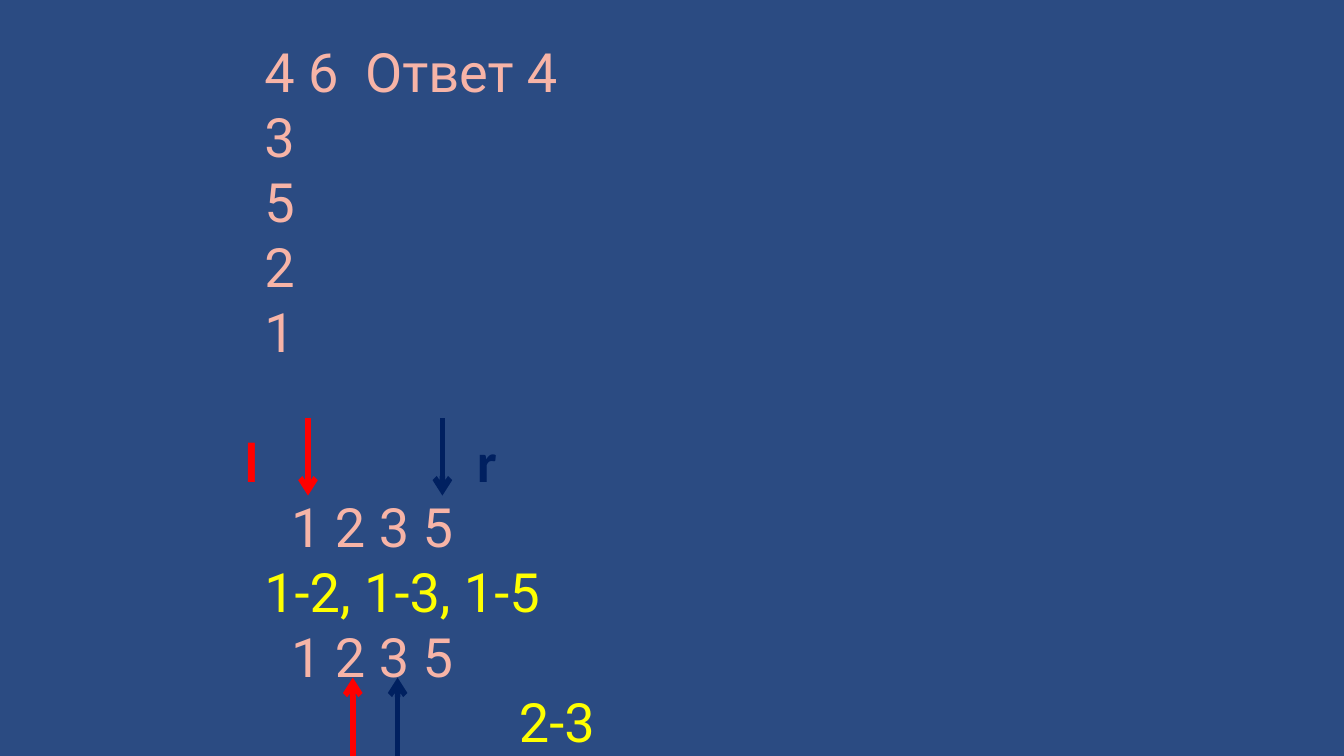
from lxml import etree
from pptx import Presentation
from pptx.dml.color import RGBColor
from pptx.enum.shapes import MSO_CONNECTOR
from pptx.enum.text import MSO_ANCHOR, MSO_AUTO_SIZE, PP_ALIGN
from pptx.oxml.ns import qn
from pptx.util import Pt

LINE = MSO_CONNECTOR.STRAIGHT
TOP = MSO_ANCHOR.TOP
GROW = MSO_AUTO_SIZE.SHAPE_TO_FIT_TEXT
LEFT = PP_ALIGN.LEFT

COLORS = {
    "back": "2B4B82",
    "pink": "F7B4A7",
    "yellow": "FFFF00",
    "red": "FF0000",
    "navy": "002060",
}
PITCH = 69.6
SPACE = 14.36


def color(name):
    return RGBColor.from_string(COLORS[name])


def write(para, text, size=58, font="Roboto", fill="pink", bold=False,
          pitch=None, before=0, indent=0, tab=None):
    props = para._p.get_or_add_pPr()
    props.set("marL", str(Pt(indent)))
    props.set("indent", "0")
    etree.SubElement(props, qn("a:buNone"))
    if tab:
        tabs = etree.SubElement(props, qn("a:tabLst"))
        etree.SubElement(tabs, qn("a:tab"), pos=str(Pt(tab)), algn="l")
    para.alignment = LEFT
    para.space_before = Pt(before)
    para.space_after = Pt(0)
    if pitch:
        para.line_spacing = Pt(pitch)
    run = para.add_run()
    run.text = text
    run.font.size = Pt(size)
    run.font.name = font
    run.font.bold = bold
    run.font.color.rgb = color(fill)


def notes(slide, box):
    body = slide.placeholders[1]
    body.left, body.top, body.width, body.height = map(Pt, box)
    frame = body.text_frame
    frame.word_wrap = True
    frame.auto_size = GROW
    frame.vertical_anchor = TOP
    rows = [
        ("4 6\tОтвет 4", {"tab": 151.3}),
        ("3", {}),
        ("5", {}),
        ("2", {}),
        ("1", {}),
        ("1 2 3 5", {"before": 2 * PITCH, "indent": 2 * SPACE}),
        ("1-2, 1-3, 1-5", {"fill": "yellow"}),
        ("1 2 3 5", {"indent": 2 * SPACE}),
        ("2-3", {"fill": "yellow", "indent": 19 * SPACE}),
    ]
    for i, (text, style) in enumerate(rows):
        para = frame.add_paragraph() if i else frame.paragraphs[0]
        write(para, text, pitch=PITCH, **style)


def arrow(slide, x, start, end, fill):
    line = slide.shapes.add_connector(LINE, Pt(x), Pt(start), Pt(x), Pt(end))
    line.line.color.rgb = color(fill)
    line.line.width = Pt(6)
    stroke = line.line._get_or_add_ln()
    etree.SubElement(stroke, qn("a:tailEnd"), type="arrow")
    etree.SubElement(line._element.spPr, qn("a:effectLst"))


def label(slide, box, text, fill):
    shape = slide.shapes.add_textbox(*map(Pt, box))
    frame = shape.text_frame
    frame.word_wrap = True
    frame.auto_size = GROW
    write(frame.paragraphs[0], text, size=60, font="Calibri", fill=fill, bold=True)


def first(slide, box):
    x, y, wide, high = box
    arrow(slide, x + 75, y, y + high, "red")
    arrow(slide, x + 219, y, y + high, "navy")
    label(slide, (x, y + 5, 42, 80), "l", "red")
    label(slide, (x + wide - 42, y + 5, 42, 80), "r", "navy")


def second(slide, box):
    x, y, wide, high = box
    arrow(slide, x, y + high, y, "red")
    arrow(slide, x + wide, y + high, y, "navy")


def main():
    deck = Presentation()
    deck.slide_width = Pt(1440)
    deck.slide_height = Pt(810)
    slide = deck.slides.add_slide(deck.slide_layouts[1])
    fill = slide.background.fill
    fill.solid()
    fill.fore_color.rgb = color("back")
    title = slide.shapes.title._element
    title.getparent().remove(title)
    notes(slide, (276, 37.5, 1164, 785))
    first(slide, (255, 448, 291, 83))
    second(slide, (378, 726, 48, 94))
    deck.save("out.pptx")


if __name__ == "__main__":
    main()
